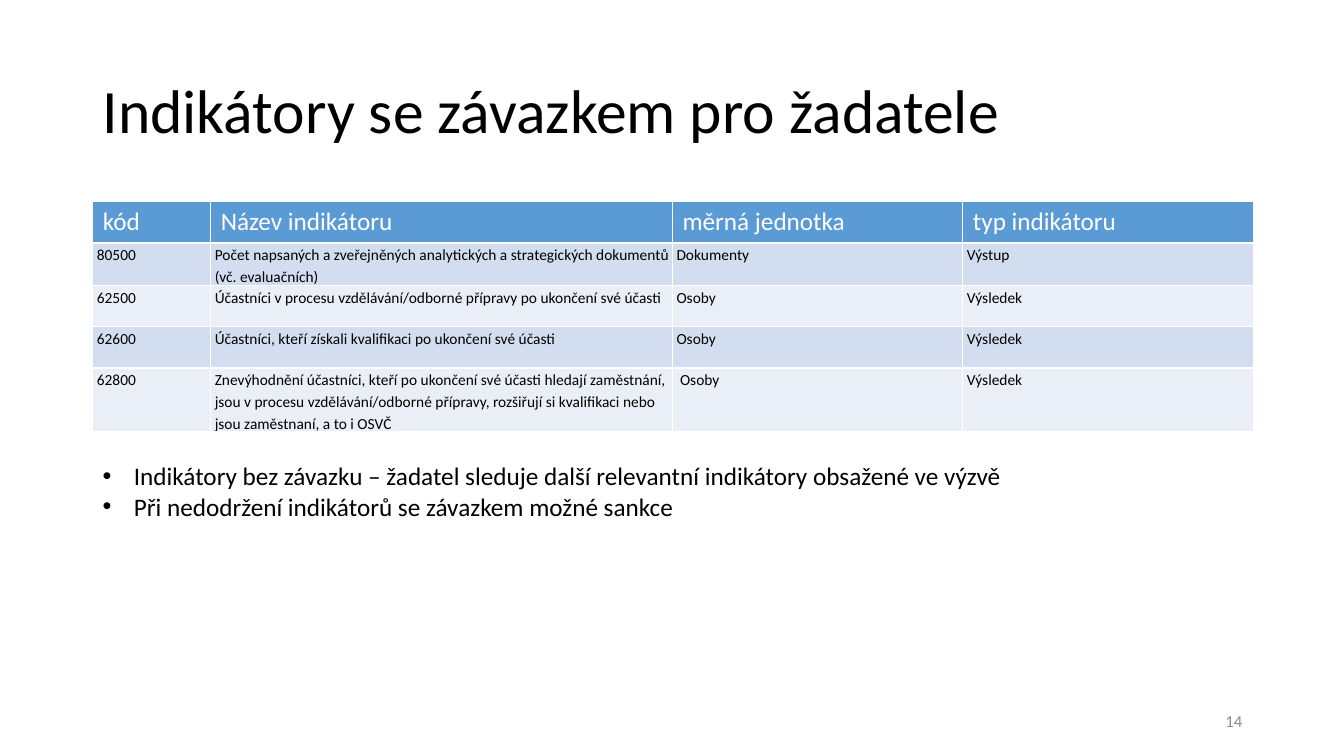
from pptx import Presentation
from pptx.dml.color import RGBColor
from pptx.enum.text import MSO_ANCHOR, PP_ALIGN
from pptx.util import Inches, Pt
from lxml import etree

MIDDLE, TOP = MSO_ANCHOR.MIDDLE, MSO_ANCHOR.TOP
LEFT, RIGHT = PP_ALIGN.LEFT, PP_ALIGN.RIGHT
FONT = "Calibri"
COLORS = {
    "text": "000000",
    "header_text": "FFFFFF",
    "number": "8C8C8C",
    "header": "5B9BD5",
    "odd": "D2DEEF",
    "even": "EAEFF7",
}
DRAWING = "{http://schemas.openxmlformats.org/drawingml/2006/main}"
WIDTH, HEIGHT = 13.33, 7.5
MARGIN, CONTENT = 0.92, 11.5
COLUMNS = [1.17, 4.58, 2.88, 2.88]
ROW = 0.41
HEADINGS = ["kód", "Název indikátoru", "měrná jednotka", "typ indikátoru"]
INDICATORS = [
    ["80500", "Počet napsaných a zveřejněných analytických a strategických "
     "dokumentů (vč. evaluačních)", "Dokumenty", "Výstup"],
    ["62500", "Účastníci v procesu vzdělávání/odborné přípravy po ukončení své účasti",
     "Osoby", "Výsledek"],
    ["62600", "Účastníci, kteří získali kvalifikaci po ukončení své účasti",
     "Osoby", "Výsledek"],
    ["62800", "Znevýhodnění účastníci, kteří po ukončení své účasti hledají zaměstnání, "
     "jsou v procesu vzdělávání/odborné přípravy, rozšiřují si kvalifikaci nebo "
     "jsou zaměstnaní, a to i OSVČ", " Osoby", "Výsledek"],
]
NOTES = [
    "Indikátory bez závazku – žadatel sleduje další relevantní indikátory obsažené ve výzvě",
    "Při nedodržení indikátorů se závazkem možné sankce",
]


def write(para, text, size=18, color="text", align=LEFT, line=None, gap=None,
          indent=0, hanging=0, bullet=None):
    span = para.add_run()
    span.text = text
    span.font.name = FONT
    span.font.size = Pt(size)
    span.font.bold = False
    span.font.color.rgb = RGBColor.from_string(COLORS[color])
    para.alignment = align
    if line:
        para.line_spacing = line
    if gap is not None:
        para.space_before = para.space_after = Pt(gap)
    properties = para._p.get_or_add_pPr()
    properties.set("marL", str(Inches(indent)))
    properties.set("indent", str(Inches(-hanging)))
    if bullet:
        etree.SubElement(properties, DRAWING + "buFont", typeface="Arial")
        etree.SubElement(properties, DRAWING + "buChar", char=bullet)


def add_text(page, box, lines, anchor=TOP, **style):
    frame = page.shapes.add_textbox(*map(Inches, box)).text_frame
    frame.word_wrap = True
    frame.vertical_anchor = anchor
    for index, text in enumerate(lines):
        para = frame.add_paragraph() if index else frame.paragraphs[0]
        write(para, text, **style)


def fill_cell(cell, text, fill, inset=True, **style):
    cell.fill.solid()
    cell.fill.fore_color.rgb = RGBColor.from_string(COLORS[fill])
    if not inset:
        cell.margin_left = cell.margin_right = cell.margin_top = cell.margin_bottom = 0
    write(cell.text_frame.paragraphs[0], text, **style)


def add_indicators(page, left, top):
    rows = len(INDICATORS) + 1
    box = map(Inches, (left, top, sum(COLUMNS), rows * ROW))
    table = page.shapes.add_table(rows, len(COLUMNS), *box).table
    for column, width in zip(table.columns, COLUMNS):
        column.width = Inches(width)
    for row in table.rows:
        row.height = Inches(ROW)
    for column, heading in enumerate(HEADINGS):
        fill_cell(table.cell(0, column), heading, "header", color="header_text")
    for row, indicator in enumerate(INDICATORS, 1):
        for column, text in enumerate(indicator):
            fill_cell(table.cell(row, column), text, "odd" if row % 2 else "even",
                      inset=False, size=11, line=1.15, gap=3, indent=0.04)


def build_indicator_slide(deck):
    page = deck.slides.add_slide(deck.slide_layouts[6])
    add_text(page, (MARGIN, 0.4, CONTENT, 1.45), ["Indikátory se závazkem pro žadatele"],
             anchor=MIDDLE, size=44, line=0.9)
    add_indicators(page, MARGIN, 2)
    add_text(page, (MARGIN + CONTENT - 3, 6.95, 3, 0.4), ["14"],
             anchor=MIDDLE, size=12, color="number", align=RIGHT)
    add_text(page, (MARGIN, 4.52, CONTENT, 0.71), NOTES,
             indent=0.31, hanging=0.31, bullet="•")


def main():
    deck = Presentation()
    deck.slide_width, deck.slide_height = Inches(WIDTH), Inches(HEIGHT)
    build_indicator_slide(deck)
    deck.save("out.pptx")


if __name__ == "__main__":
    main()
